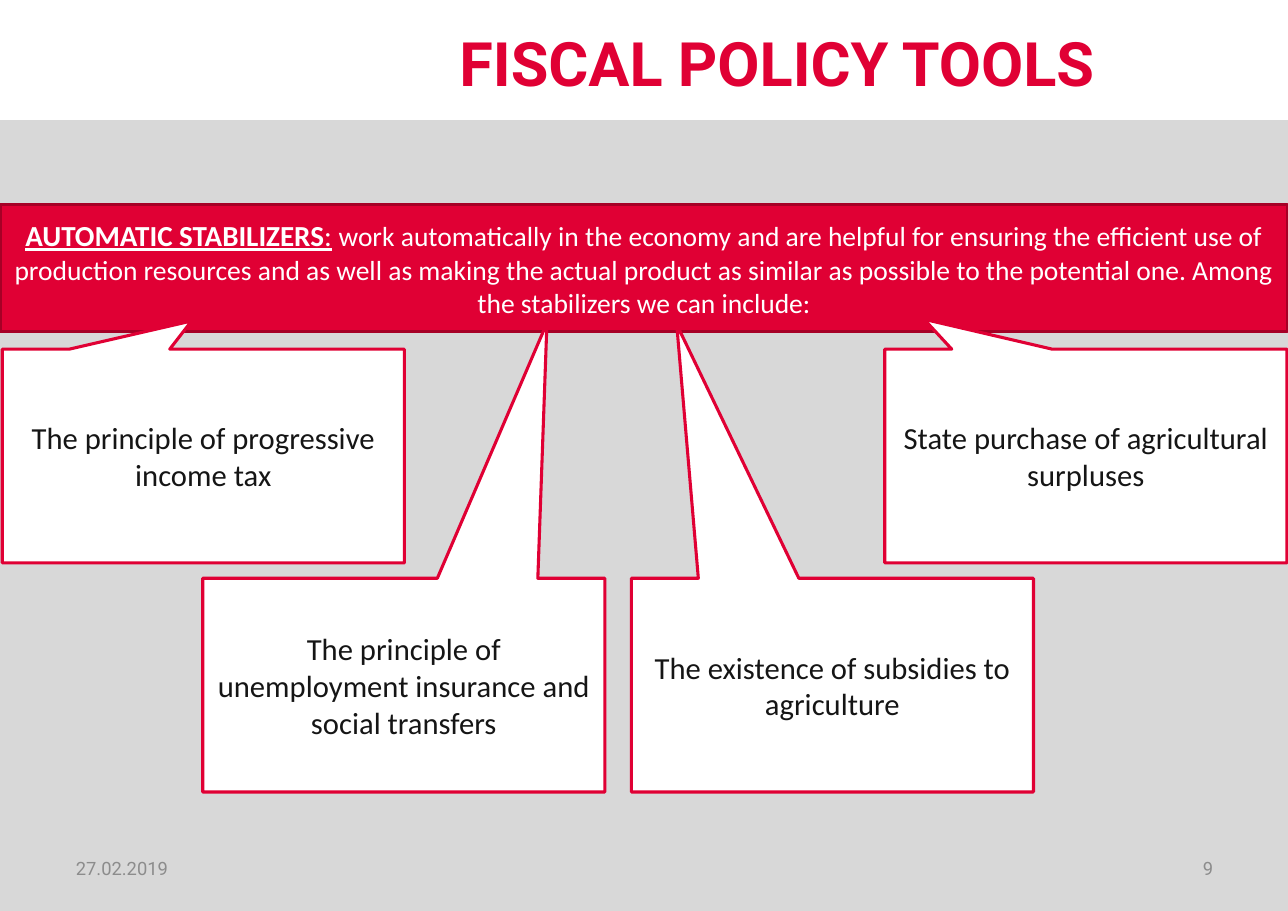
"""Build the slide on automatic stabilizers among fiscal policy tools."""
import pptx
import pptx.util
import pptx.dml.color
import pptx.enum.shapes
import pptx.enum.text

Inches, Pt = pptx.util.Inches, pptx.util.Pt
Shape = pptx.enum.shapes.MSO_SHAPE
Align = pptx.enum.text.PP_ALIGN

WIDE, HIGH = 11.69, 8.27
RED, DARK, WHITE, GREY, INK, PALE = "E00034", "A60026", "FFFFFF", "8C8C8C", "151515", "D8D8D8"
TITLE = "FISCAL POLICY TOOLS"
DATE, PAGE = "27.02.2019", "9"
TERM = "AUTOMATIC STABILIZERS"
BODY = (
    "work automatically in the economy and are helpful for ensuring the efficient use of "
    "production resources and as well as making the actual product as similar as possible "
    "to the potential one. Among the stabilizers we can include:"
)
BOX = (3.65, 1.94)
UPPER, LOWER = 3.17, 5.25
CALLS = [
    ("The existence of subsidies to agriculture", 5.73, LOWER, (-0.387, -1.688)),
    ("State purchase of agricultural surpluses", 8.03, UPPER, (-0.402, -0.64)),
    ("The principle of unemployment insurance and social transfers", 1.84, LOWER, (0.356, -1.695)),
    ("The principle of progressive income tax", 0.02, UPPER, (-0.029, -0.632)),
]

deck = pptx.Presentation()
deck.slide_width, deck.slide_height = Inches(WIDE), Inches(HIGH)
slide = deck.slides.add_slide(deck.slide_layouts[6])


def paint(target, color):
    if hasattr(target, "solid"):
        target.solid()
        target = target.fore_color
    else:
        target = target.color
    target.rgb = pptx.dml.color.RGBColor.from_string(color)


def write(shape, text, size=20, color=INK, font="Calibri", bold=False, under=False,
          align=Align.CENTER):
    frame = shape.text_frame
    frame.word_wrap = True
    frame.vertical_anchor = pptx.enum.text.MSO_ANCHOR.MIDDLE
    para = frame.paragraphs[0]
    para.alignment = align
    run = para.add_run()
    run.text = text
    run.font.size, run.font.name = Pt(size), font
    run.font.bold, run.font.underline = bold, under
    paint(run.font, color)


def draw(kind, place, fill, line=None):
    shape = slide.shapes.add_shape(kind, *map(Inches, place))
    shape.shadow.inherit = False
    paint(shape.fill, fill)
    if line:
        paint(shape.line, line)
        shape.line.width = Pt(2)
    else:
        shape.line.fill.background()
    return shape


def label(place, text, **form):
    write(slide.shapes.add_textbox(*map(Inches, place)), text, font="Roboto", **form)


draw(Shape.RECTANGLE, (0, 1.09, WIDE, HIGH - 1.09), PALE)
label((2.99, 0.2, 8.12, 0.72), TITLE, size=40, color=RED, bold=True)
label((0.59, 7.66, 2.73, 0.44), DATE, size=12, color=GREY, align=Align.LEFT)
label((8.38, 7.66, 2.73, 0.44), PAGE, size=12, color=GREY, align=Align.RIGHT)

band = draw(Shape.RECTANGLE, (0, 1.86, WIDE, 1.15), RED, DARK)
write(band, TERM, size=19, color=WHITE, bold=True, under=True)
write(band, ":", size=19, color=WHITE, under=True)
write(band, " ", size=19, color=WHITE)
write(band, BODY, size=18, color=WHITE)

for text, left, top, tip in CALLS:
    call = draw(Shape.RECTANGULAR_CALLOUT, (left, top, *BOX), WHITE, RED)
    call.adjustments[0], call.adjustments[1] = tip
    write(call, text)

deck.save("out.pptx")
